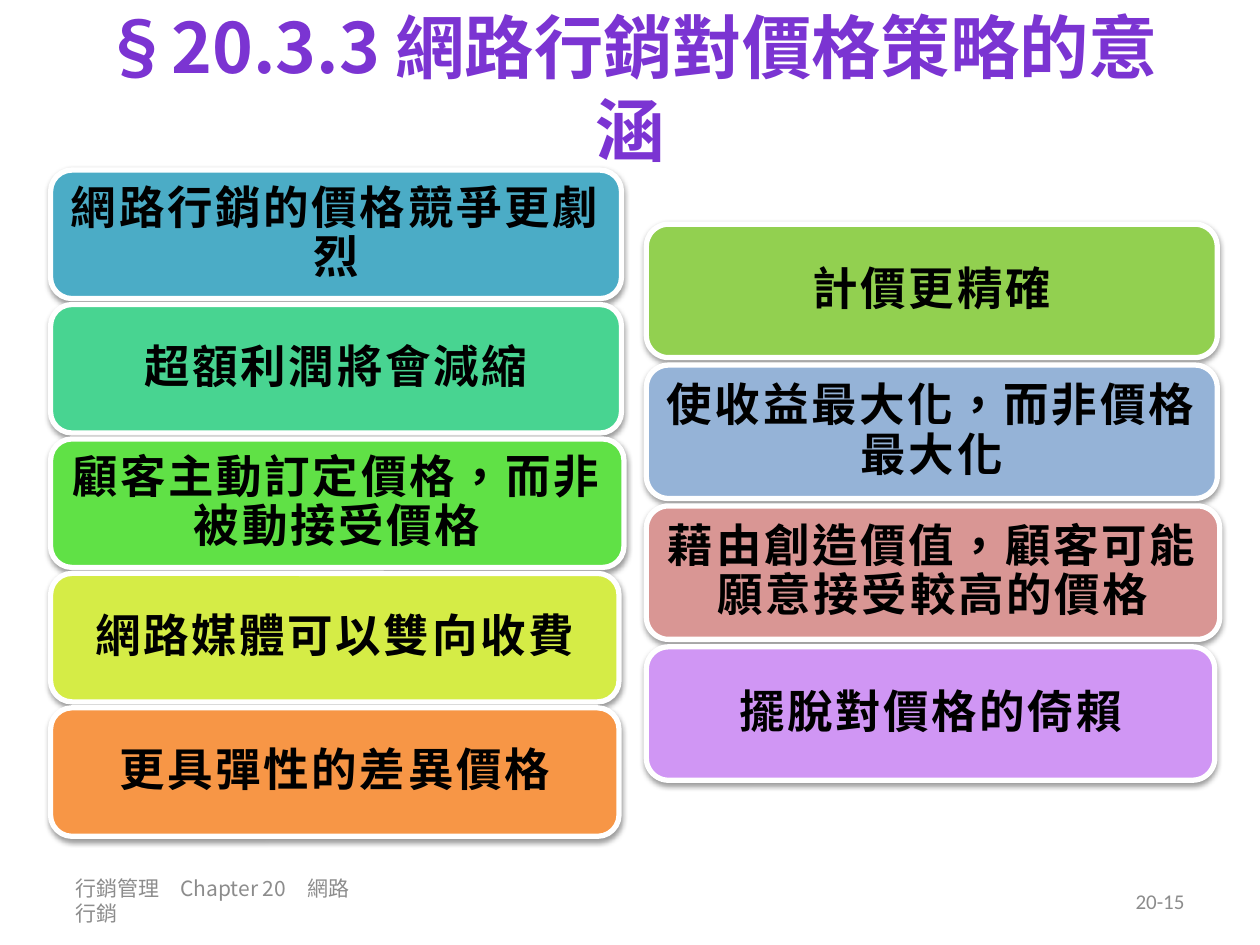
from lxml import etree
from pptx import Presentation
from pptx import util as u
from pptx.dml.color import RGBColor
from pptx.enum import shapes, text
from pptx.oxml.ns import qn

PURPLE = RGBColor(0x7B, 0x34, 0xD2)
GRAY = RGBColor(0x8C, 0x8C, 0x8C)
BLACK = RGBColor(0, 0, 0)
WHITE = RGBColor(0xFF, 0xFF, 0xFF)
TEAL = RGBColor(0x4B, 0xAC, 0xC6)
MINT = RGBColor(0x48, 0xD4, 0x91)
GREEN = RGBColor(0x60, 0xE1, 0x46)
LIME = RGBColor(0xD5, 0xEC, 0x46)
ORANGE = RGBColor(0xF7, 0x96, 0x46)
LEAF = RGBColor(0x92, 0xD0, 0x50)
BLUE = RGBColor(0x95, 0xB3, 0xD7)
ROSE = RGBColor(0xD9, 0x96, 0x94)
LILAC = RGBColor(0xD0, 0x96, 0xF4)

CJK = "Noto Sans CJK SC"
LATIN = "Calibri"
CARD_WIDTHS = (11.51, 11.51, 11.56, 11.46, 11.46)

MARKET_CHANGES = (
    ("網路行銷的價格競爭更劇烈", TEAL),
    ("超額利潤將會減縮", MINT),
    ("顧客主動訂定價格，而非被動接受價格", GREEN),
    ("網路媒體可以雙向收費", LIME),
    ("更具彈性的差異價格", ORANGE),
)
PRICING_GOALS = (
    ("計價更精確", LEAF),
    ("使收益最大化，而非價格最大化", BLUE),
    ("藉由創造價值，顧客可能願意接受較高的價格", ROSE),
    ("擺脫對價格的倚賴", LILAC),
)


def write(frame, wording, size, color, font=LATIN, bold=False, spacing=0,
          align=text.PP_ALIGN.CENTER, leading=1.0):
    frame.word_wrap = True
    frame.auto_size = text.MSO_AUTO_SIZE.NONE
    frame.vertical_anchor = text.MSO_ANCHOR.MIDDLE
    paragraph = frame.paragraphs[0]
    paragraph.alignment = align
    paragraph.line_spacing = leading
    run = paragraph.add_run()
    run.text = wording
    run.font.size = u.Pt(size)
    run.font.bold = bold
    run.font.color.rgb = color
    run.font.name = font
    properties = run.font._element
    properties.set("lang", "zh-TW")
    properties.set("spc", str(int(spacing * 100)))
    east_asian = etree.Element(qn("a:ea"), typeface=CJK)
    properties.find(qn("a:latin")).addnext(east_asian)


def add_shadow(card):
    card.shadow.inherit = False
    effects = card._element.spPr.find(qn("a:effectLst"))
    shadow = etree.SubElement(
        effects, qn("a:outerShdw"), blurRad="40000", dist="20000",
        dir="5400000", rotWithShape="0")
    color = etree.SubElement(shadow, qn("a:srgbClr"), val="000000")
    etree.SubElement(color, qn("a:alpha"), val="38000")


def add_card(slide, wording, fill, left, top, width, height):
    card = slide.shapes.add_shape(
        shapes.MSO_SHAPE.ROUNDED_RECTANGLE,
        u.Cm(left), u.Cm(top), u.Cm(width), u.Cm(height))
    card.fill.solid()
    card.fill.fore_color.rgb = fill
    card.line.color.rgb = WHITE
    card.line.width = u.Pt(3)
    add_shadow(card)
    frame = card.text_frame
    frame.margin_left = frame.margin_right = u.Cm(0.28)
    frame.margin_top = frame.margin_bottom = u.Cm(0.13)
    write(frame, wording, 26, BLACK, bold=True, spacing=1.5, leading=0.9)


def add_column(slide, cards, left, top, height, pitch):
    for row, ((wording, fill), width) in enumerate(zip(cards, CARD_WIDTHS)):
        add_card(slide, wording, fill, left, top + row * pitch, width, height)


def add_title(slide):
    title = slide.shapes.title
    title.left, title.top = u.Cm(1.27), u.Cm(0)
    title.width, title.height = u.Cm(22.86), u.Cm(3.53)
    for wording, font in (("§20.3.3 ", CJK), ("網路行銷對價格策略的意涵", LATIN)):
        write(title.text_frame, wording, 39.6, PURPLE, font=font, bold=True)


def add_footer(slide, wording, left, width, **style):
    footer = slide.shapes.add_textbox(
        u.Cm(left), u.Cm(17.65), u.Cm(width), u.Cm(1.02))
    write(footer.text_frame, wording, 12, GRAY, **style)


def main():
    deck = Presentation()
    deck.slide_width, deck.slide_height = u.Cm(25.4), u.Cm(19.05)
    slide = deck.slides.add_slide(deck.slide_layouts[5])
    add_title(slide)
    add_footer(slide, "行銷管理　Chapter 20　網路行銷", 1.27, 6.22,
               font=CJK, align=text.PP_ALIGN.LEFT)
    add_footer(slide, "20-15", 18.21, 5.92, align=text.PP_ALIGN.RIGHT)
    add_column(slide, MARKET_CHANGES, 1.02, 3.43, 2.59, 2.71)
    add_column(slide, PRICING_GOALS, 13.03, 4.52, 2.69, 2.84)
    deck.save("out.pptx")


if __name__ == "__main__":
    main()
